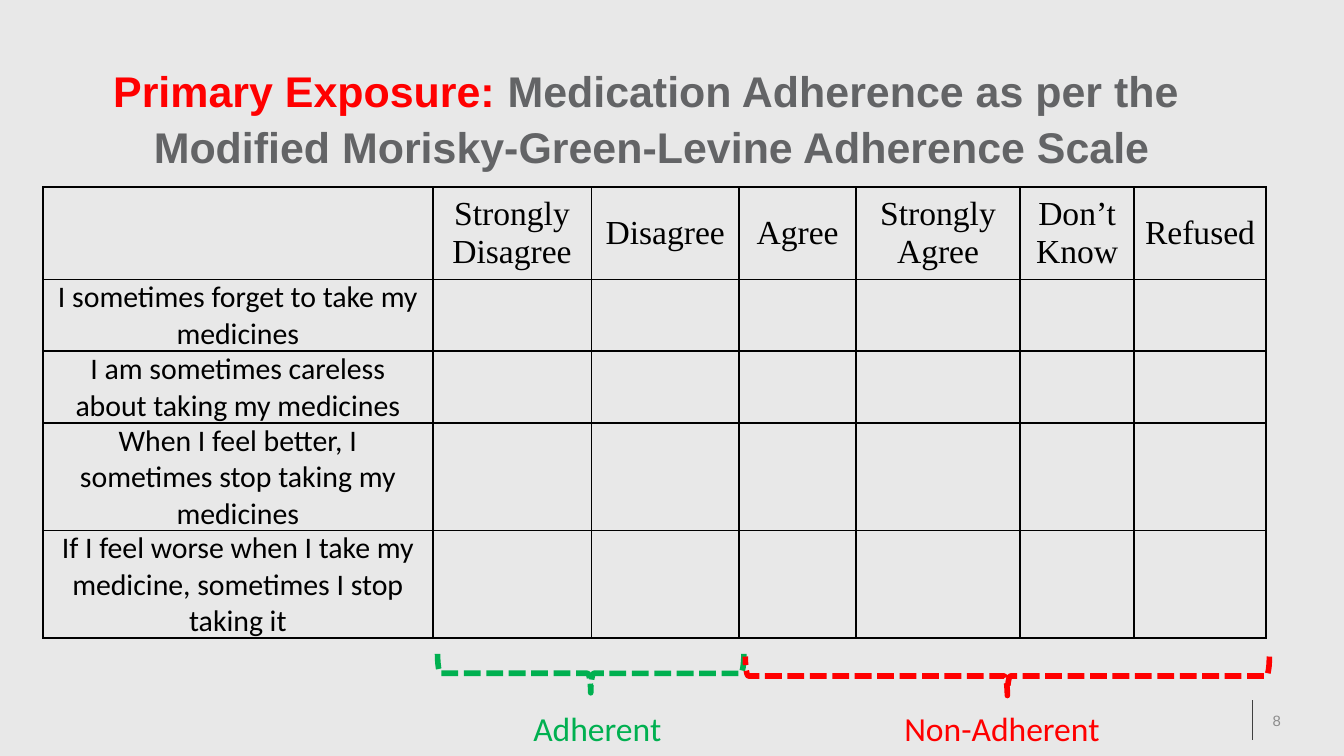
from dataclasses import dataclass

from lxml.etree import SubElement
from pptx import Presentation
from pptx.dml.color import RGBColor
from pptx.enum.dml import MSO_LINE
from pptx.enum.shapes import MSO_CONNECTOR, MSO_SHAPE
from pptx.enum.text import MSO_ANCHOR, PP_ALIGN
from pptx.oxml.ns import qn
from pptx.util import Inches, Pt

COLORS = {
    "background": "E8E8E8",
    "red": "FF0000",
    "green": "00B050",
    "title": "636466",
    "black": "000000",
    "number": "8C8C8C",
    "rule": "404040",
}


@dataclass
class Span:
    text: str
    size: float
    color: str
    font: str = "Calibri"
    bold: bool = False


@dataclass
class Group:
    """A brace under some answer columns, with its label."""
    label: str
    color: str
    brace_left: float
    brace_top: float
    brace_length: float
    label_left: float
    label_width: float
    label_height: float


HEADINGS = ["", "Strongly Disagree", "Disagree", "Agree",
            "Strongly Agree", "Don’t Know", "Refused"]
STATEMENTS = [
    "I sometimes forget to take my medicines",
    "I am sometimes careless about taking my medicines",
    "When I feel better, I sometimes stop taking my medicines",
    "If I feel worse when I take my medicine, sometimes I stop taking it",
]
COLUMN_WIDTHS = [2.9, 1.18, 1.1, 0.87, 1.22, 0.85, 0.98]
ROW_HEIGHTS = [0.69, 0.48, 0.48, 0.6, 0.61]
GROUPS = [
    Group("Adherent", "green", 4.25, 3.87, 2.28, 3.87, 1.17, 0.41),
    Group("Non-Adherent", "red", 7.35, 3.08, 3.9, 6.63, 1.72, 0.29),
]
BRACE_DEPTH = 0.29


def rgb(name: str) -> RGBColor:
    return RGBColor.from_string(COLORS[name])


def add_span(para, span: Span) -> None:
    run = para.add_run()
    run.text = span.text
    run.font.size = Pt(span.size)
    run.font.name = span.font
    run.font.bold = span.bold
    run.font.color.rgb = rgb(span.color)


def add_text(page, left: float, top: float, width: float, height: float,
             span: Span, anchor=MSO_ANCHOR.TOP) -> None:
    box = page.shapes.add_textbox(Inches(left), Inches(top), Inches(width), Inches(height))
    box.text_frame.vertical_anchor = anchor
    box.text_frame.word_wrap = False
    add_span(box.text_frame.paragraphs[0], span)


def add_title(page) -> None:
    box = page.shapes.add_textbox(Inches(0.32), Inches(0.4), Inches(9.07), Inches(0.63))
    box.text_frame.word_wrap = True
    para = box.text_frame.paragraphs[0]
    para.alignment = PP_ALIGN.CENTER
    para.line_spacing = Pt(30)
    add_span(para, Span("Primary Exposure: ", 23, "red", "Arial", True))
    add_span(para, Span("Medication Adherence as per the ", 23, "title", "Arial", True))
    para.add_line_break()
    add_span(para, Span("Modified Morisky-Green-Levine Adherence Scale", 23, "title", "Arial", True))


def add_borders(cell) -> None:
    properties = cell._tc.get_or_add_tcPr()
    for index, side in enumerate(("lnL", "lnR", "lnT", "lnB")):
        line = properties.makeelement(qn(f"a:{side}"), {"w": str(Pt(1))})
        fill = SubElement(line, qn("a:solidFill"))
        SubElement(fill, qn("a:srgbClr"), val=COLORS["black"])
        properties.insert(index, line)


def add_scale_table(page) -> None:
    table = page.shapes.add_table(
        len(ROW_HEIGHTS), len(COLUMN_WIDTHS), Inches(0.32), Inches(1.39),
        Inches(sum(COLUMN_WIDTHS)), Inches(sum(ROW_HEIGHTS))).table
    table.first_row = table.horz_banding = False
    for column, width in zip(table.columns, COLUMN_WIDTHS):
        column.width = Inches(width)
    for row, height in zip(table.rows, ROW_HEIGHTS):
        row.height = Inches(height)
    for cell in table.iter_cells():
        cell.fill.background()
        cell.vertical_anchor = MSO_ANCHOR.MIDDLE
        cell.margin_left = cell.margin_right = Inches(0.07)
        cell.margin_top = cell.margin_bottom = 0
        add_borders(cell)

    texts = [(0, column, Span(text, 18, "black", "Times New Roman"))
             for column, text in enumerate(HEADINGS) if text]
    texts += [(row, 0, Span(text, 16, "black"))
              for row, text in enumerate(STATEMENTS, start=1)]
    for row, column, span in texts:
        para = table.cell(row, column).text_frame.paragraphs[0]
        para.alignment = PP_ALIGN.CENTER
        add_span(para, span)


def add_group(page, group: Group) -> None:
    # The frame is upright; the quarter turn makes the brace point down
    brace = page.shapes.add_shape(
        MSO_SHAPE.RIGHT_BRACE, Inches(group.brace_left), Inches(group.brace_top),
        Inches(BRACE_DEPTH), Inches(group.brace_length))
    brace.rotation = 90
    brace.shadow.inherit = False
    brace.fill.background()
    brace.line.color.rgb = rgb(group.color)
    brace.line.width = Pt(3)
    brace.line.dash_style = MSO_LINE.SQUARE_DOT
    add_text(page, group.label_left, 5.22, group.label_width, group.label_height,
             Span(group.label, 18, group.color))


def add_page_number(page) -> None:
    rule = page.shapes.add_connector(
        MSO_CONNECTOR.STRAIGHT, Inches(9.32), Inches(5.21), Inches(9.32), Inches(5.51))
    rule.line.color.rgb = rgb("rule")
    rule.line.width = Pt(0.5)
    SubElement(rule._element.spPr, qn("a:effectLst"))
    add_text(page, 9.37, 5.21, 0.63, 0.3, Span("8", 8, "number", "Arial"), MSO_ANCHOR.MIDDLE)


def main() -> None:
    # Widescreen page, 16 to 9
    deck = Presentation()
    deck.slide_width = Inches(10)
    deck.slide_height = Inches(10 * 9 / 16)
    page = deck.slides.add_slide(deck.slide_layouts[6])
    page.background.fill.solid()
    page.background.fill.fore_color.rgb = rgb("background")

    add_page_number(page)
    for group in GROUPS:
        add_group(page, group)
    add_scale_table(page)
    add_title(page)
    deck.save("out.pptx")


if __name__ == "__main__":
    main()
